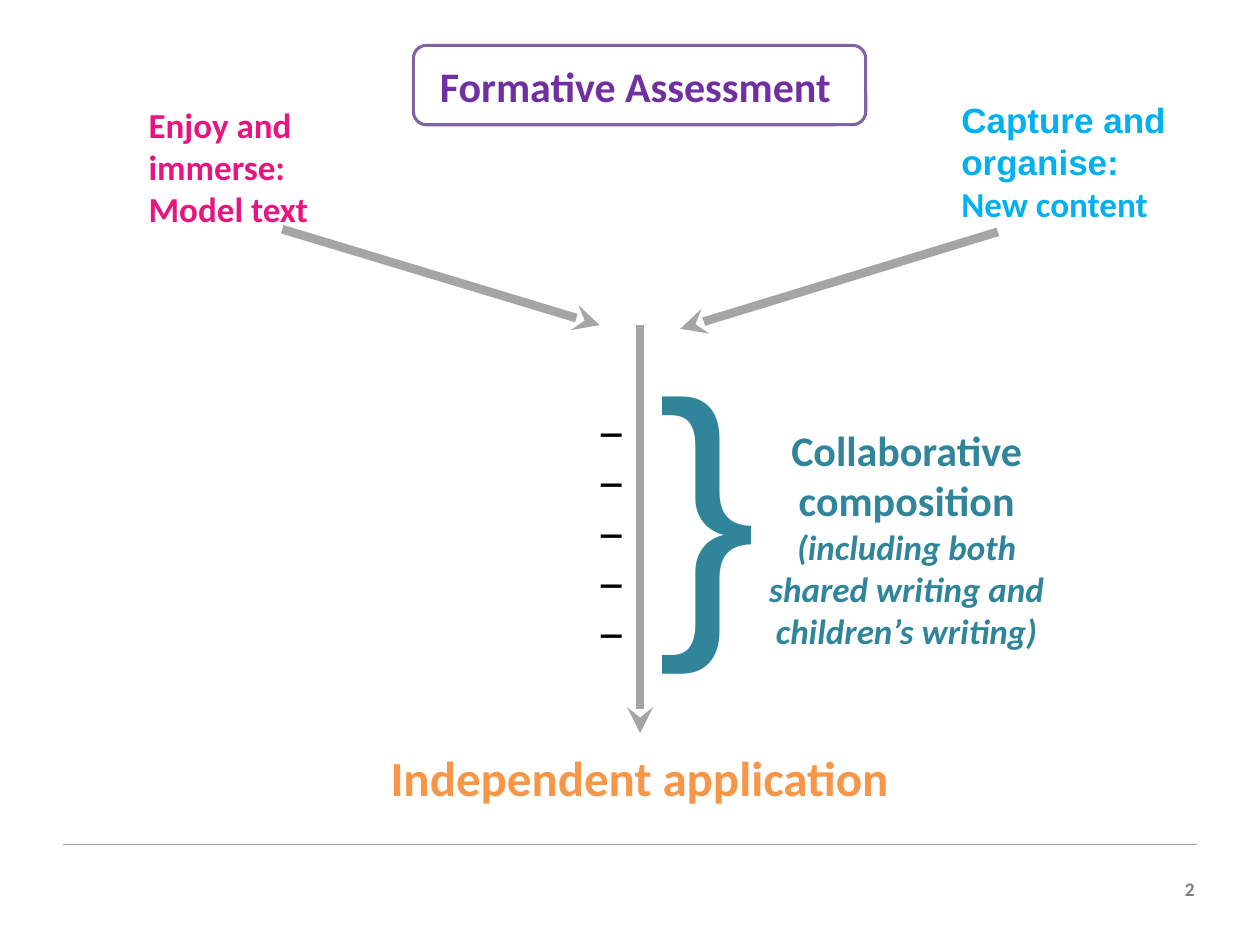
import pptx
import pptx.util
import pptx.dml.color
import pptx.enum.shapes
import pptx.enum.text
import pptx.oxml
import pptx.oxml.ns
from dataclasses import dataclass

Pt = pptx.util.Pt
RGB = pptx.dml.color.RGBColor
ALIGN = pptx.enum.text.PP_ALIGN
LEFT, MID, RIGHT = ALIGN.LEFT, ALIGN.CENTER, ALIGN.RIGHT

WHITE = RGB(0xFF, 0xFF, 0xFF)
BLACK = RGB(0x00, 0x00, 0x00)
GREY = RGB(0xA5, 0xA5, 0xA5)
DARK = RGB(0x7F, 0x7F, 0x7F)
PLUM = RGB(0x80, 0x64, 0xA2)
VIOLET = RGB(0x70, 0x30, 0xA0)
PINK = RGB(0xE6, 0x15, 0x7F)
BLUE = RGB(0x00, 0xB0, 0xF0)
TEAL = RGB(0x31, 0x85, 0x9B)
ORANGE = RGB(0xF7, 0x96, 0x46)


@dataclass
class Para:
    text: str
    size: float
    face: str = "Calibri"
    bold: bool = True
    slant: bool = False


@dataclass
class Label:
    at: tuple[float, float, float, float]
    color: RGB
    paras: list[Para]
    align: ALIGN = LEFT
    side: float = 7.2


@dataclass
class Line:
    start: tuple[float, float]
    end: tuple[float, float]
    width: float = 5
    arrow: bool = True


TITLE = Label((92.9, 31, 545.8, 36.7), VIOLET,
              [Para("Formative Assessment ", 24)], MID)

LABELS = [
    Label((662.4, 497.5, 27.4, 20.9), DARK, [Para("2", 11)], RIGHT),
    Label((77.8, 55.4, 147.6, 80), PINK,
          [Para("Enjoy and immerse:", 20), Para("Model text", 20)]),
    Label((542.2, 52.6, 147.6, 80), BLUE,
          [Para("Capture and organise:", 20, "Arial"), Para("New content", 20)]),
    Label((419.8, 239, 196.6, 138.2), TEAL,
          [Para("Collaborative composition", 24),
           Para("(including both shared writing and children’s writing)", 20,
                slant=True)], MID),
    Label((198.7, 423.4, 333.4, 41), ORANGE,
          [Para("Independent application", 28)], MID),
    Label((368.6, 176.4, 33.8, 213.1), TEAL,
          [Para("}", 170, "Arial", False)]),
    Label((339.8, 218.9, 18, 152.6), BLACK, [Para("_", 24)] * 5, side=3.6),
]

LINES = [
    Line((36, 482.4), (684, 482.4), 0.75, False),
    Line((365.8, 185.8), (365.8, 419)),
    Line((161.3, 131), (342.7, 185.8)),
    Line((570.2, 132.5), (388.8, 187.9)),
]


def write(shape, label: Label) -> None:
    shape.left, shape.top, shape.width, shape.height = map(Pt, label.at)
    frame = shape.text_frame
    frame.word_wrap = True
    frame.auto_size = pptx.enum.text.MSO_AUTO_SIZE.NONE
    frame.vertical_anchor = pptx.enum.text.MSO_ANCHOR.TOP
    frame.margin_left = frame.margin_right = Pt(label.side)
    frame.margin_top = frame.margin_bottom = Pt(3.6)
    for i, para in enumerate(label.paras):
        item = frame.add_paragraph() if i else frame.paragraphs[0]
        item.text = para.text
        item.alignment = label.align
        font = item.font
        font.name, font.size = para.face, Pt(para.size)
        font.bold, font.italic = para.bold, para.slant
        font.color.rgb = label.color


def draw(slide, line: Line) -> None:
    shape = slide.shapes.add_connector(
        pptx.enum.shapes.MSO_CONNECTOR.STRAIGHT,
        *map(Pt, line.start + line.end))
    shape.line.color.rgb = GREY
    shape.line.width = Pt(line.width)
    if line.arrow:
        tail = pptx.oxml.parse_xml(
            f'<a:tailEnd {pptx.oxml.ns.nsdecls("a")} type="stealth"/>')
        shape.line._get_or_add_ln().append(tail)
    shape.element.spPr.append(pptx.oxml.parse_xml(
        f'<a:effectLst {pptx.oxml.ns.nsdecls("a")}/>'))


def frame_title(slide) -> None:
    box = slide.shapes.add_shape(
        pptx.enum.shapes.MSO_SHAPE.ROUNDED_RECTANGLE,
        *map(Pt, (236.2, 25.9, 258.5, 45.4)))
    box.shadow.inherit = False
    box.fill.solid()
    box.fill.fore_color.rgb = WHITE
    box.line.color.rgb = PLUM
    box.line.width = Pt(1.75)
    slide.shapes.title.element.addprevious(box.element)


def main() -> None:
    deck = pptx.Presentation()
    deck.slide_width, deck.slide_height = Pt(720), Pt(540)
    slide = deck.slides.add_slide(deck.slide_layouts[5])
    write(slide.shapes.title, TITLE)
    frame_title(slide)
    for line in LINES:
        draw(slide, line)
    for label in LABELS:
        write(slide.shapes.add_textbox(*map(Pt, label.at)), label)
    deck.save("out.pptx")


if __name__ == "__main__":
    main()
